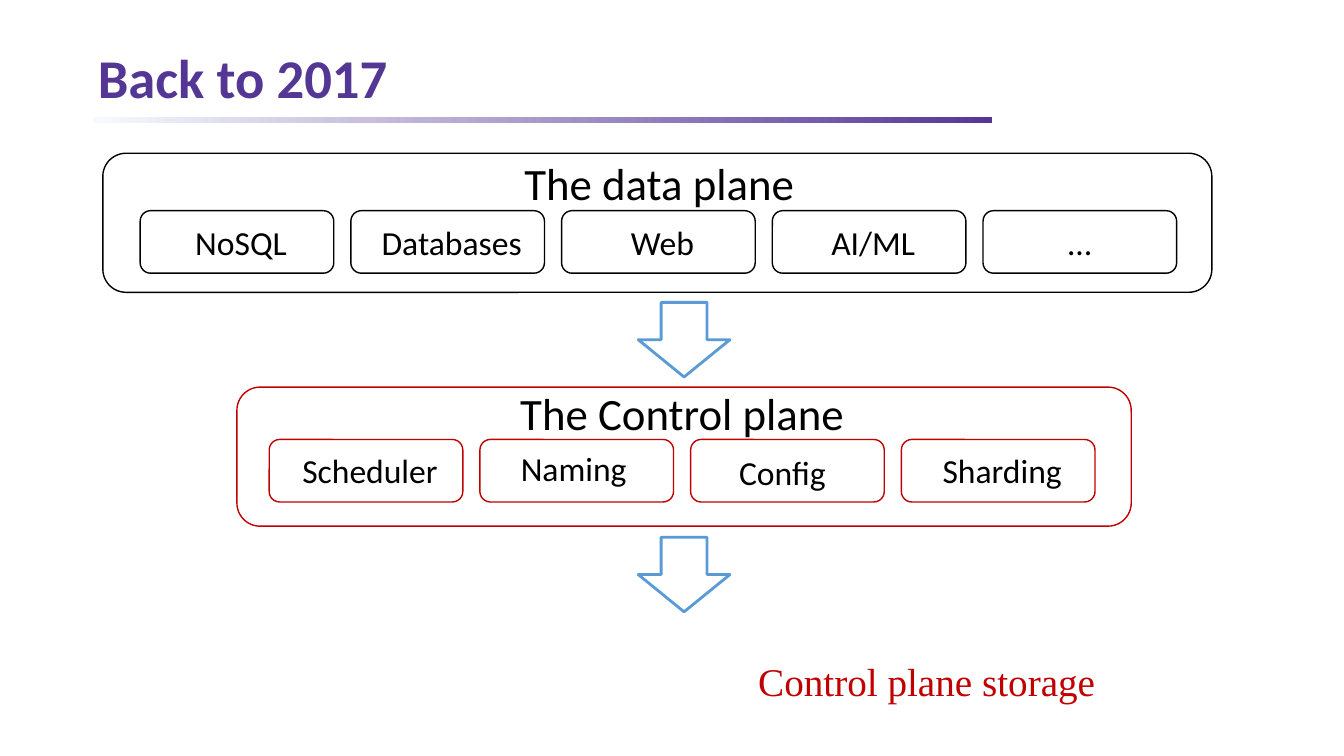
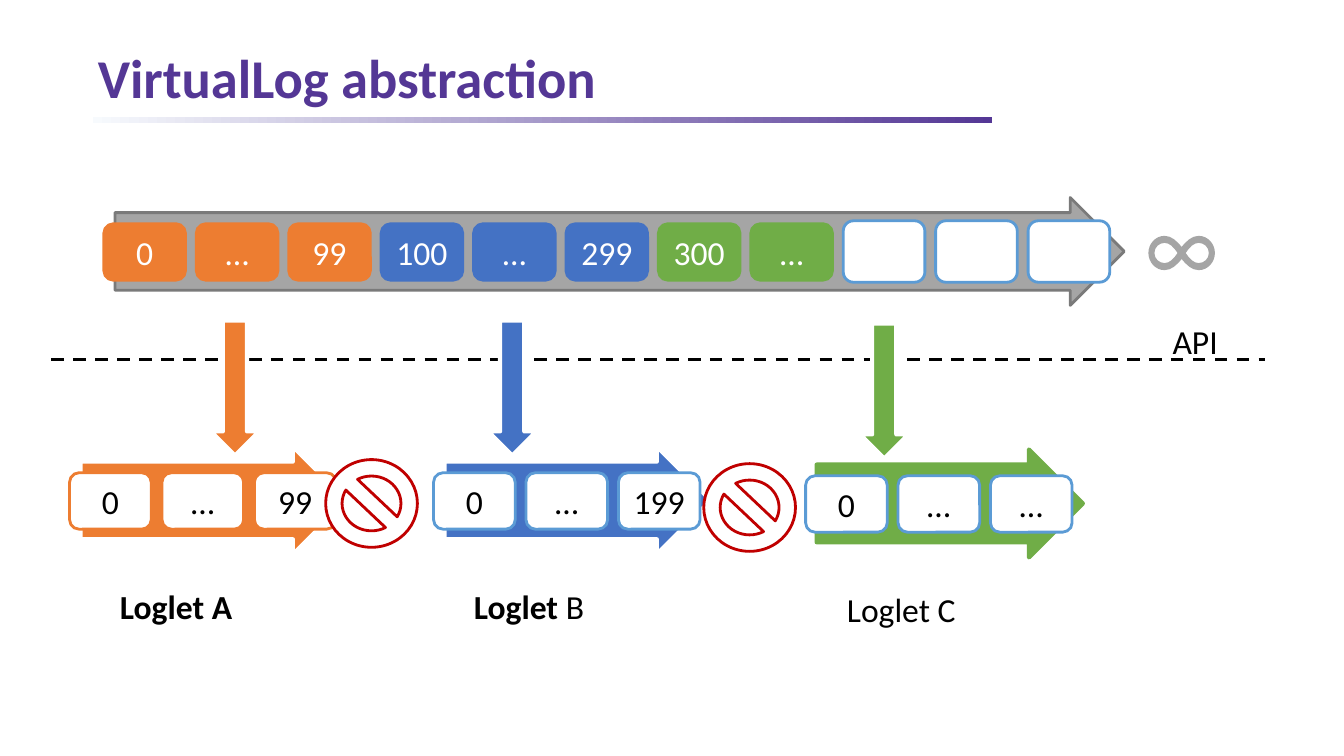
from pptx import Presentation
from pptx.dml.color import RGBColor
from pptx.enum.dml import MSO_LINE
from pptx.enum.shapes import MSO_CONNECTOR, MSO_SHAPE
from pptx.enum.text import MSO_ANCHOR, PP_ALIGN
from pptx.oxml.ns import qn
from pptx.util import Inches, Pt

RECT, ROUND = MSO_SHAPE.RECTANGLE, MSO_SHAPE.ROUNDED_RECTANGLE
DOWN, RIGHT, BARRED = MSO_SHAPE.DOWN_ARROW, MSO_SHAPE.RIGHT_ARROW, MSO_SHAPE.NO_SYMBOL
TOP, MIDDLE = MSO_ANCHOR.TOP, MSO_ANCHOR.MIDDLE
LEFT, CENTER = PP_ALIGN.LEFT, PP_ALIGN.CENTER

BLACK, WHITE, RED, SKY = "000000", "FFFFFF", "C00000", "5B9BD5"
PURPLE, PALE = "543795", "F7FAFD"
GRAY, DARK_GRAY = "A5A5A5", "7A7A7A"
ORANGE, BLUE, GREEN = "ED7D31", "4472C4", "70AD47"
SANS, SERIF = "Calibri", "Times New Roman"
INSET = 0.05

# Cards: label, then the sideways and downward nudge of the label in its card.
PLANES = [
    dict(title="The data plane", title_at=(5.15, 1.5, 3.09, 0.64), panel=(1.02, 1.52, 11, 1.38),
         color=BLACK, first=(1.39, 2.09),
         cards=[("NoSQL", 0.04, 0), ("Databases", 0.04, 0), ("Web", 0.04, 0),
                ("AI/ML", 0.04, 0), ("…", 0, 0)]),
    dict(title="The Control plane", title_at=(5.11, 3.78, 3.84, 0.64), panel=(2.35, 3.84, 8.87, 1.38),
         color=RED, first=(2.67, 4.36),
         cards=[("Scheduler", 0.04, -0.01), ("Naming", -0.03, -0.03),
                ("Config", -0.05, 0.01), ("Sharding", 0.04, -0.01)]),
]
CARD_W, CARD_H, CARD_PITCH = 1.92, 0.62, 2.09
PLANE_ARROWS = [3, 5.33]

LOG = [("0", ORANGE), ("…", ORANGE), ("99", ORANGE), ("100", BLUE), ("…", BLUE),
       ("299", BLUE), ("300", GREEN), ("…", GREEN)]
FREE_SLOTS = 3
LOGLETS = [
    dict(left=0.8, drop=0, fill=ORANGE, edge=WHITE, cell_edge=ORANGE, cells=["0", "…", "99"],
         down=2.09, label=[("Loglet A", True)], label_left=1.14, barrier=(3.23, 4.56)),
    dict(left=4.41, drop=0, fill=BLUE, edge=WHITE, cell_edge=SKY, cells=["0", "…", "199"],
         down=4.84, label=[("Loglet ", True), ("B", False)], label_left=4.65, barrier=(6.98, 4.6)),
    dict(left=8.1, drop=0.03, fill=GREEN, edge=GREEN, cell_edge=SKY, cells=["0", "…", "…"],
         down=8.53, label=[("Loglet C", False)], label_left=8.35, barrier=None),
]
LABEL_W = 1.38
CELL_W, CELL_H, CELL_PITCH = 0.81, 0.56, 11 / 12

# Right half of the infinity sign, as Bezier control points around its centre.
INFINITY_CENTER = (11.72, 2.51)
LOBE = [(0, -0.06), (0.05, -0.12), (0.1, -0.17), (0.17, -0.17),
        (0.26, -0.17), (0.33, -0.09), (0.33, 0),
        (0.33, 0.09), (0.26, 0.17), (0.17, 0.17),
        (0.1, 0.17), (0.05, 0.12), (0, 0.06)]
HOLE = [(0.17, 0.1), (0.12, 0.1), (0.08, 0.06), (0.04, 0),
        (0.08, -0.06), (0.12, -0.1), (0.17, -0.1),
        (0.22, -0.1), (0.27, -0.06), (0.27, 0),
        (0.27, 0.06), (0.22, 0.1), (0.17, 0.1)]


def rgb(color):
    return RGBColor.from_string(color)


def write(sp, runs, size, color=BLACK, font=SANS, align=LEFT, anchor=TOP, dx=0, dy=0):
    """Fill a shape with (text, bold) runs; dx and dy shift the text through the insets."""
    tf = sp.text_frame
    tf.word_wrap = True
    tf.vertical_anchor = anchor
    tf.margin_left, tf.margin_right = (Inches(INSET + max(0, 2 * d)) for d in (dx, -dx))
    tf.margin_top, tf.margin_bottom = (Inches(INSET + max(0, 2 * d)) for d in (dy, -dy))
    p = tf.paragraphs[0]
    p.alignment = align
    for text, bold in runs:
        r = p.add_run()
        r.text = text
        r.font.name, r.font.size, r.font.bold = font, Pt(size), bold
        r.font.color.rgb = rgb(color)
    return p


def add_text(s, box, runs, size, **style):
    return write(s.shapes.add_textbox(*map(Inches, box)), runs, size, **style)


def add_box(s, kind, box, fill, line, width, adjust=()):
    sp = s.shapes.add_shape(kind, *map(Inches, box))
    sp.shadow.inherit = False
    sp.fill.solid()
    sp.fill.fore_color.rgb = rgb(fill)
    sp.line.color.rgb = rgb(line)
    sp.line.width = Pt(width)
    for i, value in enumerate(adjust):
        sp.adjustments[i] = value
    return sp


def add_block_arrow(s, box, fill, line, width):
    return add_box(s, RIGHT, box, fill, line, width, (0.72, 0.5))


def add_cell(s, left, top, text, fill, line, color):
    sp = add_box(s, ROUND, (left, top, CELL_W, CELL_H), fill, line, 2)
    write(sp, [(text, False)], 24, color, align=CENTER, anchor=MIDDLE)


def add_titled_slide(prs, title):
    s = prs.slides.add_slide(prs.slide_layouts[6])
    rule = s.shapes.add_shape(RECT, *map(Inches, (0.92, 1.16, 8.92, 0.06)))
    rule.shadow.inherit = False
    rule.line.fill.background()
    rule.fill.gradient()
    rule.fill.gradient_angle = 0
    for stop, color in zip(rule.fill.gradient_stops, (PALE, PURPLE)):
        stop.color.rgb = rgb(color)
    p = add_text(s, (0.92, 0.43, 11.5, 0.75), [(title, True)], 39, color=PURPLE, anchor=MIDDLE)
    p.line_spacing = 0.9
    return s


def add_outline(s, contours):
    """Add a borderless freeform from closed contours of points in inches."""
    contours = [[(Inches(x), Inches(y)) for x, y in contour] for contour in contours]
    builder = s.shapes.build_freeform(*contours[0][0])
    for i, contour in enumerate(contours):
        if i:
            builder.move_to(*contour[0])
        builder.add_line_segments(contour[1:], close=True)
    sp = builder.convert_to_shape()
    sp.shadow.inherit = False
    sp.line.fill.background()
    return sp


def curve(sp):
    """Turn each three line segments of a freeform into one Bezier curve."""
    lines = list(sp._element.iter(qn("a:lnTo")))
    for i in range(0, len(lines), 3):
        bezier = lines[i].makeelement(qn("a:cubicBezTo"), {})
        lines[i].addprevious(bezier)
        for line in lines[i:i + 3]:
            bezier.append(line[0])
            line.getparent().remove(line)


def mirror(points):
    return [(-x, y) for x, y in reversed(points)]


def add_infinity(s):
    cx, cy = INFINITY_CENTER
    contours = (LOBE + mirror(LOBE)[1:], HOLE, mirror(HOLE))
    sp = add_outline(s, [[(cx + x, cy + y) for x, y in contour] for contour in contours])
    curve(sp)
    sp.fill.solid()
    sp.fill.fore_color.rgb = rgb(GRAY)


def add_square_label(s, left, top, runs):
    right, bottom = left + LABEL_W, top + LABEL_W
    sp = add_outline(s, [[(left, top), (right, top), (right, bottom), (left, bottom)]])
    sp.fill.background()
    write(sp, runs, 24)


def add_dashed_line(s, left, right, y):
    line = s.shapes.add_connector(MSO_CONNECTOR.STRAIGHT, *map(Inches, (left, y, right, y)))
    line.line.color.rgb = rgb(BLACK)
    line.line.width = Pt(2.25)
    line.line.dash_style = MSO_LINE.DASH
    sp_pr = line._element.spPr
    sp_pr.append(sp_pr.makeelement(qn("a:effectLst"), {}))


def build_planes(prs):
    s = add_titled_slide(prs, "Back to 2017")
    for plane in PLANES:
        add_box(s, ROUND, plane["panel"], WHITE, plane["color"], 1)
        add_text(s, plane["title_at"], [(plane["title"], False)], 32)
        left, top = plane["first"]
        for i, (label, dx, dy) in enumerate(plane["cards"]):
            card = add_box(s, ROUND, (left + i * CARD_PITCH, top, CARD_W, CARD_H),
                           WHITE, plane["color"], 1)
            write(card, [(label, False)], 24, align=CENTER, anchor=MIDDLE, dx=dx, dy=dy)
    for top in PLANE_ARROWS:
        add_box(s, DOWN, (6.33, top, 0.91, 0.74), WHITE, SKY, 2)
    add_text(s, (7.47, 6.47, 3.74, 0.57), [("Control plane storage", False)], 28,
             color=RED, font=SERIF)


def build_log(prs):
    s = add_titled_slide(prs, "VirtualLog abstraction")
    add_block_arrow(s, (1.14, 1.96, 10.01, 1.07), GRAY, DARK_GRAY, 2)
    for i, (text, color) in enumerate(LOG):
        add_cell(s, 1.03 + i * CELL_PITCH, 2.22, text, color, color, WHITE)
    for i in range(len(LOG), len(LOG) + FREE_SLOTS):
        add_box(s, ROUND, (1.03 + i * CELL_PITCH, 2.19, CELL_W, 0.61), WHITE, SKY, 2)
    add_infinity(s)

    add_dashed_line(s, 0.51, 12.55, 3.57)
    add_text(s, (11.58, 3.13, 0.66, 0.5), [("API", False)], 24)

    for log in LOGLETS:
        left, drop = log["left"], log["drop"]
        add_block_arrow(s, (left, 4.43 + drop, 2.64, 1.07), log["fill"], log["edge"], 3)
        for i, text in enumerate(log["cells"]):
            add_cell(s, left - 0.11 + i * CELL_PITCH, 4.69 + drop, text,
                     WHITE, log["cell_edge"], BLACK)
        add_box(s, DOWN, (log["down"], 3.18 + drop, 0.48, 1.34), log["fill"], WHITE, 3)
        if log["barrier"]:
            add_box(s, BARRED, (*log["barrier"], 0.91, 0.87), WHITE, RED, 2)
            add_text(s, (log["label_left"], 5.76, LABEL_W, 0.5), log["label"], 24)
        else:
            add_square_label(s, log["label_left"], 5.76 + drop, log["label"])


def main():
    prs = Presentation()
    prs.slide_width, prs.slide_height = Inches(13.33), Inches(7.5)
    build_planes(prs)
    build_log(prs)
    prs.save("out.pptx")


if __name__ == "__main__":
    main()
